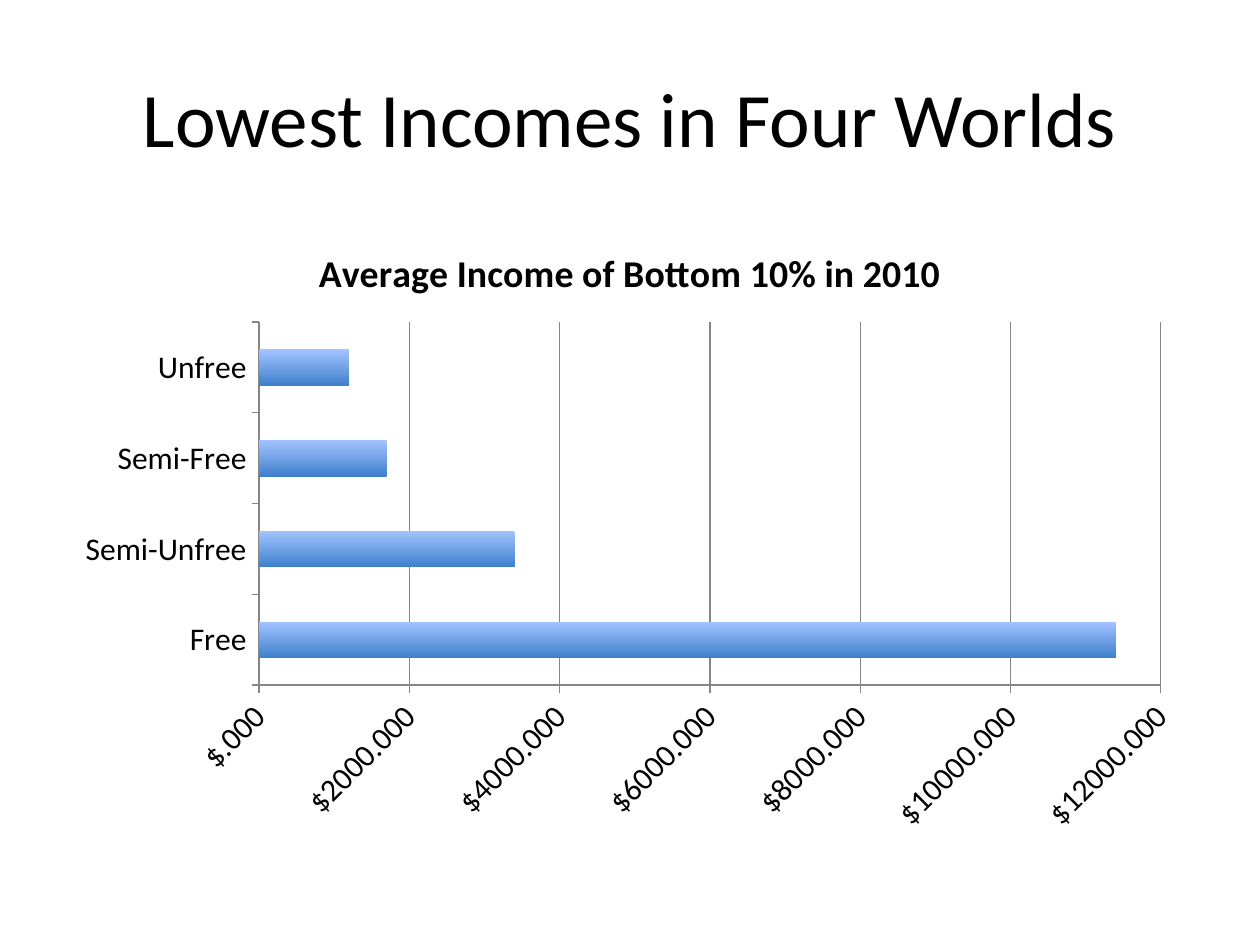
from pptx import Presentation
from pptx.chart.data import CategoryChartData
from pptx.dml.color import RGBColor
from pptx.enum.chart import XL_CHART_TYPE, XL_TICK_MARK
from pptx.enum.text import MSO_ANCHOR, PP_ALIGN
from pptx.oxml.ns import qn
from pptx.util import Pt


def style(font, size, color="000000", bold=False):
    font.name = "Calibri"
    font.size = Pt(size)
    font.bold = bold
    font.color.rgb = RGBColor.from_string(color)


presentation = Presentation()
presentation.slide_width = Pt(720)
presentation.slide_height = Pt(540)
slide = presentation.slides.add_slide(presentation.slide_layouts[5])

heading = slide.shapes.title
heading.left, heading.top, heading.width, heading.height = Pt(36), Pt(21.6), Pt(648), Pt(90)
heading.text_frame.text = "Lowest Incomes in Four Worlds"
heading.text_frame.vertical_anchor = MSO_ANCHOR.MIDDLE
heading.text_frame.paragraphs[0].alignment = PP_ALIGN.CENTER
style(heading.text_frame.paragraphs[0].runs[0].font, 44)

measure = "Average Income of Bottom 10% in 2010"
incomes = CategoryChartData()
incomes.categories = ["Free", "Semi-Unfree", "Semi-Free", "Unfree"]
incomes.add_series(measure, [11400, 3400, 1700, 1200])
chart = slide.shapes.add_chart(
    XL_CHART_TYPE.BAR_CLUSTERED, Pt(36), Pt(126), Pt(648), Pt(356.4), incomes
).chart
style(chart.font, 18)
chart.has_legend = False
chart.has_title = True
chart.chart_title.include_in_layout = False
chart.chart_title.text_frame.text = measure
style(chart.chart_title.text_frame.paragraphs[0].runs[0].font, 21.6, bold=True)

worlds, dollars = chart.category_axis, chart.value_axis
for axis in (worlds, dollars):
    axis.major_tick_mark = XL_TICK_MARK.OUTSIDE
    axis.minor_tick_mark = XL_TICK_MARK.NONE
    style(axis.tick_labels.font, 18)
worlds.has_major_gridlines = False
dollars.has_major_gridlines = True
for line in (worlds.format.line, dollars.format.line, dollars.major_gridlines.format.line):
    line.color.rgb = RGBColor.from_string("868686")
    line.width = Pt(0.75)

dollars.minimum_scale = 0
dollars.maximum_scale = 12000
dollars.major_unit = 2000
dollars.tick_labels.number_format = '"$"#.##0'
dollars.tick_labels.number_format_is_linked = False
dollars._element.find(qn("c:txPr")).find(qn("a:bodyPr")).set("rot", "-2700000")

bars = chart.plots[0]
bars.gap_width = 150
bars.vary_by_categories = False
shading = bars.series[0].format.fill
shading.gradient()
shading.gradient_angle = 270
for stop, position, color in zip(shading.gradient_stops, (0, 1), ("A3C4FF", "3F80CD")):
    stop.position = position
    stop.color.rgb = RGBColor.from_string(color)

presentation.save("out.pptx")
